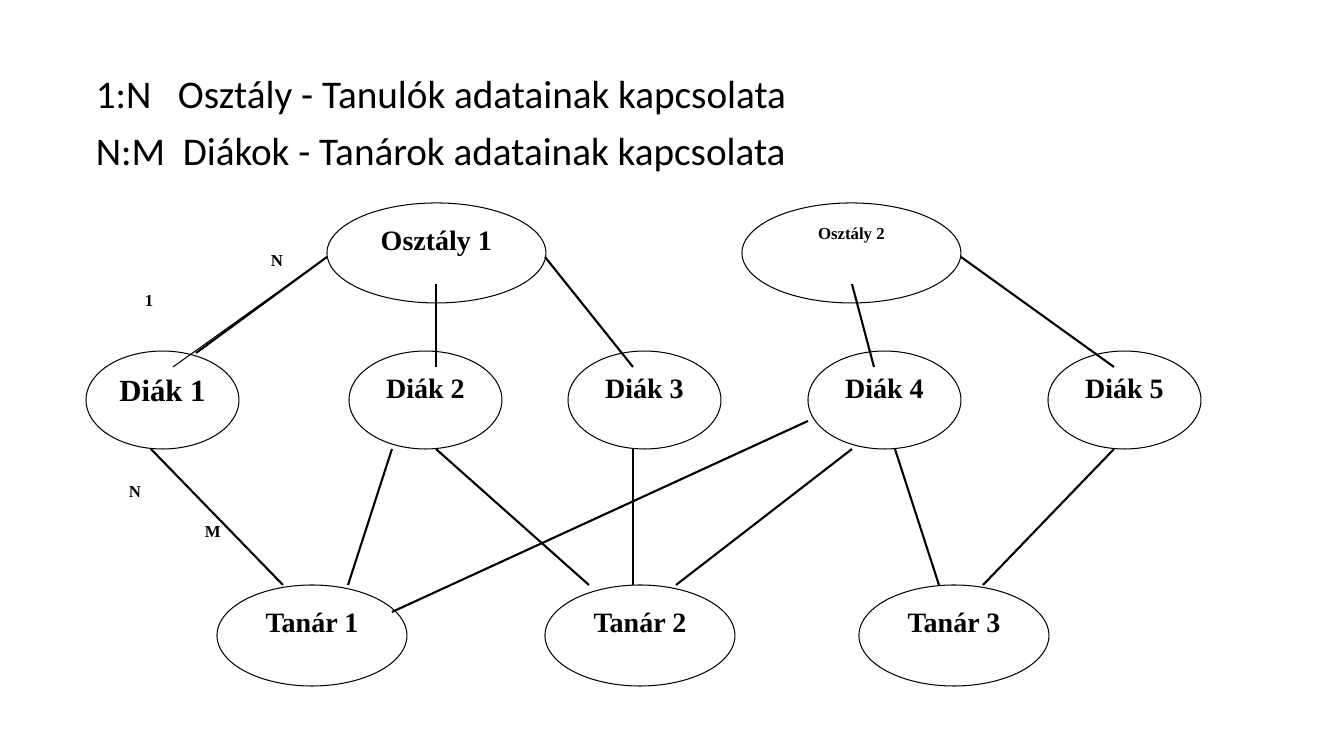
"""Builds the slide on 1:N and N:M relations between classes, students and teachers."""
from lxml import etree
from pptx import Presentation, util as u
from pptx.dml.color import RGBColor
from pptx.enum import shapes, text
from pptx.oxml.ns import qn

SCALE = 914400 / 100.8
BLACK, WHITE = "000000", "FFFFFF"


def px(*lengths):
    return [u.Emu(round(length * SCALE)) for length in lengths]


def add_text(paragraph, wording, **font_format):
    run = paragraph.add_run()
    run.text = wording
    run.font.color.rgb = RGBColor.from_string(BLACK)
    for name, value in font_format.items():
        setattr(run.font, name, value)


presentation = Presentation()
presentation.slide_width, presentation.slide_height = px(1344, 756)
slide = presentation.slides.add_slide(presentation.slide_layouts[6])

heading = slide.shapes.add_textbox(*px(86, 70, 1183, 133)).text_frame
heading.word_wrap = True
headings = [
    ("1:N\tOsztály - Tanulók adatainak kapcsolata", 82),
    ("N:M\tDiákok - Tanárok adatainak kapcsolata", 87),
]
for index, (wording, tab) in enumerate(headings):
    paragraph = heading.add_paragraph() if index else heading.paragraphs[0]
    for name, value in {"line_spacing": 0.9, "space_before": u.Pt(10)}.items():
        setattr(paragraph, name, value)
    add_text(paragraph, wording, name="Calibri", size=u.Pt(28))
    tab_list = etree.SubElement(paragraph._p.get_or_add_pPr(), qn("a:tabLst"))
    etree.SubElement(tab_list, qn("a:tab"), pos=str(px(tab)[0]), algn="l")

label_boxes = [
    ((86, 476, 197, 164), [("N", 33), ("M", 109)]),
    ((119, 245, 219, 163), [("N", 142), ("1", 16)]),
]
for place, labels in label_boxes:
    frame = slide.shapes.add_textbox(*px(*place)).text_frame
    frame.word_wrap = True
    for index, (wording, indent) in enumerate(labels):
        paragraph = frame.add_paragraph() if index else frame.paragraphs[0]
        paragraph.space_before = u.Pt(14 * index)
        paragraph._p.get_or_add_pPr().set("marL", str(px(indent)[0]))
        add_text(paragraph, wording, name="Times New Roman", size=u.Pt(12), bold=True)

entity_rows = [
    ("Osztály", 203, 219, 100, [327, 742]),
    ("Diák", 351, 153, 98, [86, 349, 568, 808, 1048]),
    ("Tanár", 585, 190, 101, [217, 545, 859]),
]
special_sizes = {"Osztály 2": 12, "Diák 1": 22}
for entity, top, width, height, lefts in entity_rows:
    for number, left in enumerate(lefts, 1):
        wording = f"{entity} {number}"
        ellipse = slide.shapes.add_shape(shapes.MSO_SHAPE.OVAL, *px(left, top, width, height))
        ellipse.shadow.inherit = False
        ellipse.fill.solid()
        ellipse.fill.fore_color.rgb = RGBColor.from_string(WHITE)
        ellipse.line.color.rgb = RGBColor.from_string(BLACK)
        ellipse.line.width = u.Pt(0.75)
        frame = ellipse.text_frame
        frame.vertical_anchor = text.MSO_ANCHOR.TOP
        paragraph = frame.paragraphs[0]
        paragraph.alignment = text.PP_ALIGN.CENTER
        add_text(paragraph, wording, name="Times New Roman",
                 size=u.Pt(special_sizes.get(wording, 20)), bold=True)

class_links = [
    (327, 257, 173, 367, 0.75),
    (327, 257, 196, 353, 1.5),
    (436, 284, 436, 367, 1.5),
    (545, 257, 633, 367, 1.5),
    (852, 284, 874, 367, 1.5),
    (961, 257, 1114, 367, 1.5),
]
teacher_ends = [(151, 283), (392, 348), (436, 589), (633, 633), (852, 676), (895, 939), (1114, 983)]
teacher_links = [(start, 449, end, 585, 1.5) for start, end in teacher_ends]
teacher_links.append((808, 421, 392, 612, 1.5))
for *ends, weight in class_links + teacher_links:
    link = slide.shapes.add_connector(shapes.MSO_CONNECTOR.STRAIGHT, *px(*ends))
    link.line.color.rgb = RGBColor.from_string(BLACK)
    link.line.width = u.Pt(weight)
    etree.SubElement(link._element.spPr, qn("a:effectLst"))

presentation.save("out.pptx")
